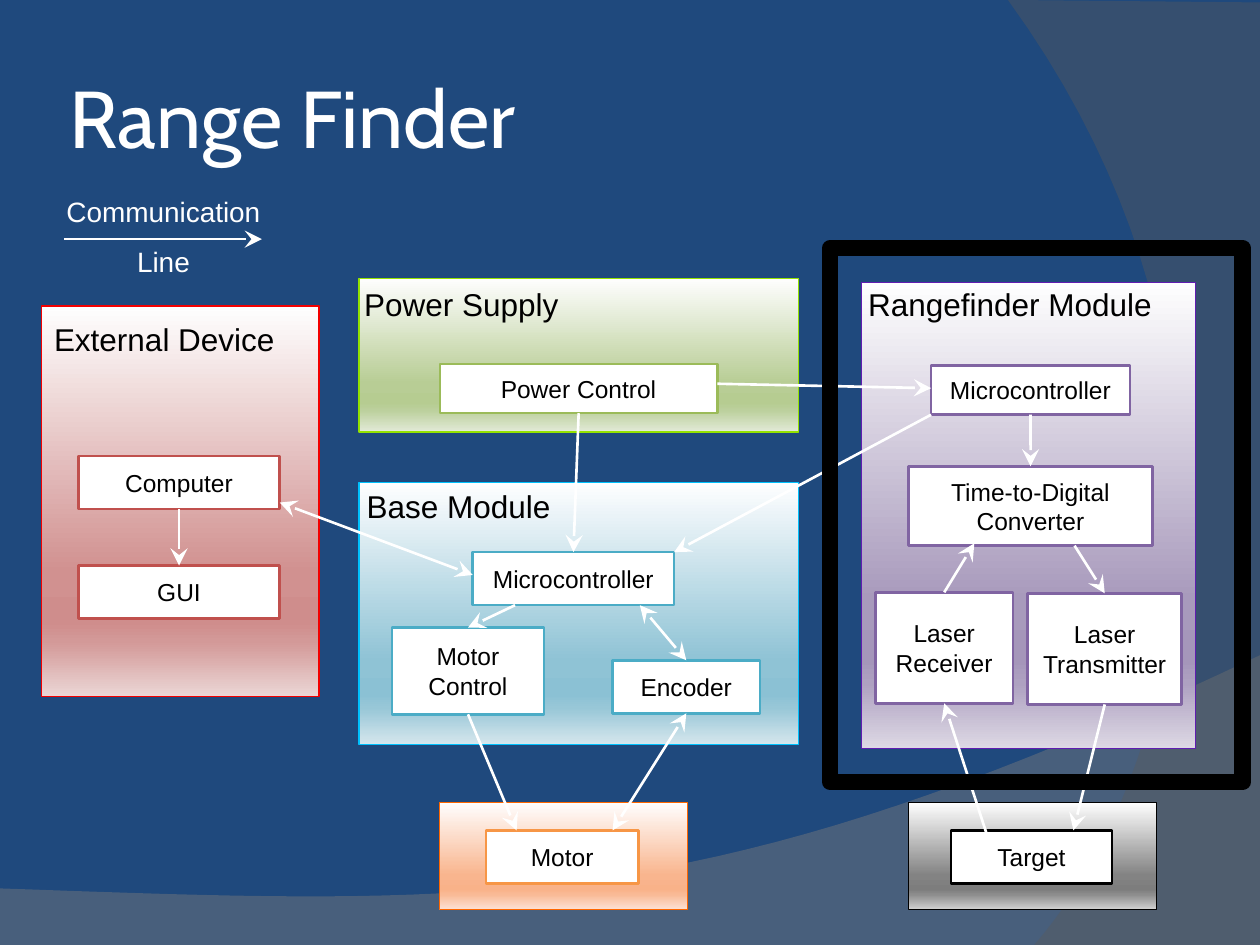
import pptx
import pptx.util
import pptx.dml.color
import pptx.enum.shapes
import pptx.enum.text
import pptx.oxml.ns
from lxml import etree

Cm, Pt = pptx.util.Cm, pptx.util.Pt
qn = pptx.oxml.ns.qn

COLOURS = {
    "background": "1F497D", "white": "FFFFFF", "black": "000000",
    "wave": "7B7B7B", "arc": "5A5A5A",
    "red": "C0504D", "red edge": "F30000",
    "green": "9BBB59", "green edge": "94E200",
    "blue": "4BACC6", "blue edge": "00C1FD",
    "purple": "8064A2", "purple edge": "601DB1",
    "orange": "F79646", "orange edge": "FF6700",
    "black edge": "000000",
}
GRADIENT_STOPS = (0, 68, 81, 86, 100)
GRADIENTS = {
    "red": ("FEFEFE", "D19190", "CF8D8C", "D39998", "EBD6D5"),
    "green": ("FEFEFE", "B8CD95", "B6CC91", "BCD09D", "E2EAD7"),
    "blue": ("FEFEFF", "8FC3D5", "8BC1D4", "98C7D7", "D5E6ED"),
    "purple": ("FEFEFE", "A89ABC", "A596BA", "AEA1C1", "DDD8E4"),
    "orange": ("FFFEFE", "F9B58E", "F9B289", "F9BA96", "FCE1D5"),
    "black": ("FEFEFE", "838383", "7D7D7D", "8D8D8D", "D2D2D2"),
}

# theme, box, title, title inset, blocks placed from the box corner (cm)
MODULES = [
    ("purple", (17.37, 5.69, 6.73, 9.4), "Rangefinder Module", (0.13, 0.05), {
        "range micro": ("Microcontroller", 1.4, 1.68, 4.01, 0.99),
        "converter": ("Time-to-Digital\nConverter", 0.94, 3.71, 4.93, 1.6),
        "receiver": ("Laser\nReceiver", 0.28, 6.25, 2.77, 2.24),
        "transmitter": ("Laser\nTransmitter", 3.35, 6.27, 3.1, 2.24)}),
    ("orange", (8.86, 16.18, 5, 2.16), "", (0, 0), {
        "motor": ("Motor", 0.94, 0.56, 3.07, 1.07)}),
    ("black", (18.31, 16.18, 5, 2.16), "", (0, 0), {
        "target": ("Target", 0.86, 0.56, 3.25, 1.07)}),
    ("red", (0.84, 6.17, 5.59, 7.87), "External Device", (0.25, 0.28), {
        "computer": ("Computer", 0.74, 3.02, 4.06, 1.07),
        "gui": ("GUI", 0.74, 5.23, 4.06, 1.07)}),
    ("green", (7.24, 5.61, 8.86, 3.1), "Power Supply", (0.1, 0.13), {
        "power": ("Power Control", 1.63, 1.73, 5.59, 0.99)}),
    ("blue", (7.24, 9.73, 8.86, 5.28), "Base Module", (0.15, 0.08), {
        "base micro": ("Microcontroller", 2.29, 1.4, 4.06, 1.07),
        "motor control": ("Motor\nControl", 0.66, 2.92, 3.07, 1.75),
        "encoder": ("Encoder", 5.11, 3.58, 2.97, 1.07)}),
]

# block and fraction of its width and height, at each end; two-way or not
LINKS = [
    ("computer", 0.5, 1, "gui", 0.5, 0, False),
    ("power", 0.5, 1, "base micro", 0.5, 0, False),
    ("base micro", 0.21, 1, "motor control", 0.5, 0, False),
    ("motor control", 0.5, 1, "motor", 0.2, 0, False),
    ("power", 1, 0.4, "range micro", 0, 0.46, False),
    ("range micro", 0.5, 1, "converter", 0.5, 0, False),
    ("receiver", 0.5, 0, "converter", 0.27, 0.97, False),
    ("converter", 0.68, 1, "transmitter", 0.5, 0, False),
    ("transmitter", 0.5, 1, "target", 0.76, 0, False),
    ("target", 0.22, 0.05, "receiver", 0.5, 1, False),
    ("computer", 1, 0.88, "base micro", 0, 0.43, True),
    ("range micro", 0, 1, "base micro", 1, 0, False),
    ("base micro", 0.83, 1, "encoder", 0.5, 0, True),
    ("encoder", 0.5, 1, "motor", 0.83, 0, True),
]


def rgb(name):
    return pptx.dml.color.RGBColor.from_string(COLOURS[name])


def set_font(paragraph, size, colour, name="Arial"):
    paragraph.font.size = Pt(size)
    paragraph.font.name = name
    paragraph.font.color.rgb = rgb(colour)


def set_insets(frame, left, top, right, bottom):
    frame.margin_left, frame.margin_top = Cm(left), Cm(top)
    frame.margin_right, frame.margin_bottom = Cm(right), Cm(bottom)


def add_box(slide, box, edge, width):
    rectangle = slide.shapes.add_shape(
        pptx.enum.shapes.MSO_SHAPE.RECTANGLE, *map(Cm, box))
    rectangle.shadow.inherit = False
    rectangle.line.color.rgb = rgb(edge)
    rectangle.line.width = Pt(width)
    return rectangle


def fill_gradient(shape, colours):
    shape.fill.gradient()
    gradient = shape._element.spPr.find(qn("a:gradFill"))
    stops = gradient.find(qn("a:gsLst"))
    for stop in list(stops):
        stops.remove(stop)
    for position, colour in zip(GRADIENT_STOPS, colours):
        stop = etree.SubElement(stops, qn("a:gs"), pos=str(position * 1000))
        etree.SubElement(stop, qn("a:srgbClr"), val=colour)
    gradient.find(qn("a:lin")).set("ang", "5400000")


def add_swoosh(slide, corners, curve, colour, alpha):
    """Fill the area between straight corners and a cubic curve."""
    steps = 40
    points = list(corners)
    for step in range(steps + 1):
        t = step / steps
        weights = ((1 - t) ** 3, 3 * t * (1 - t) ** 2, 3 * t * t * (1 - t), t ** 3)
        points.append(tuple(sum(w * p[axis] for w, p in zip(weights, curve))
                            for axis in (0, 1)))
    builder = slide.shapes.build_freeform(
        Cm(points[0][0]), Cm(points[0][1]))
    builder.add_line_segments([(Cm(x), Cm(y)) for x, y in points[1:]])
    swoosh = builder.convert_to_shape()
    swoosh.shadow.inherit = False
    swoosh.fill.solid()
    swoosh.fill.fore_color.rgb = rgb(colour)
    swoosh.line.fill.background()
    tint = swoosh._element.spPr.find(qn("a:solidFill"))[0]
    etree.SubElement(tint, qn("a:alpha"), val=str(alpha * 1000))


def add_arrow(slide, start, end, two_way=False):
    arrow = slide.shapes.add_connector(
        pptx.enum.shapes.MSO_CONNECTOR.STRAIGHT, *map(Cm, (*start, *end)))
    arrow.line.color.rgb = rgb("white")
    arrow.line.width = Pt(1.5)
    line = arrow.line._get_or_add_ln()
    for tip in ("a:headEnd", "a:tailEnd") if two_way else ("a:tailEnd",):
        etree.SubElement(line, qn(tip), type="stealth", w="lg", len="lg")
    etree.SubElement(arrow._element.spPr, qn("a:effectLst"))


def add_block(slide, box, text, colour):
    block = add_box(slide, box, colour, 1.5)
    block.fill.solid()
    block.fill.fore_color.rgb = rgb("white")
    frame = block.text_frame
    frame.text = text
    frame.vertical_anchor = pptx.enum.text.MSO_ANCHOR.MIDDLE
    set_insets(frame, 0, 0, 0, 0)
    for paragraph in frame.paragraphs:
        paragraph.alignment = pptx.enum.text.PP_ALIGN.CENTER
        set_font(paragraph, 14, "black")


def add_module(slide, box, theme, title, inset, blocks):
    """Draw a module with its blocks; return the block boxes by key."""
    module = add_box(slide, box, theme + " edge", 0.75)
    fill_gradient(module, GRADIENTS[theme])
    if title:
        frame = module.text_frame
        frame.text = title
        frame.vertical_anchor = pptx.enum.text.MSO_ANCHOR.TOP
        set_insets(frame, *inset, 0, 0)
        frame.paragraphs[0].alignment = pptx.enum.text.PP_ALIGN.LEFT
        set_font(frame.paragraphs[0], 18, "black")
    placed = {}
    for key, (text, left, top, width, height) in blocks.items():
        placed[key] = (box[0] + left, box[1] + top, width, height)
        add_block(slide, placed[key], text, theme)
    return placed


def add_title(slide, box):
    title = slide.shapes.title
    title.left, title.top, title.width, title.height = map(Cm, box)
    frame = title.text_frame
    frame.text = "Range Finder"
    frame.vertical_anchor = pptx.enum.text.MSO_ANCHOR.MIDDLE
    set_insets(frame, 0.13, 0.13, 0.13, 0.13)
    frame.paragraphs[0].alignment = pptx.enum.text.PP_ALIGN.LEFT
    set_font(frame.paragraphs[0], 46, "white", "Cabin")


def add_legend(slide, box):
    left, top = box[:2]
    frame = slide.shapes.add_textbox(*map(Cm, box)).text_frame
    frame.word_wrap = True
    frame.text = "Communication Line"
    paragraph = frame.paragraphs[0]
    paragraph.alignment = pptx.enum.text.PP_ALIGN.CENTER
    paragraph.line_spacing = 1.5
    set_font(paragraph, 16, "white")
    add_arrow(slide, (left + 0.33, top + 1.37), (left + 4.31, top + 1.37))


def point_on(box, across, down):
    return box[0] + across * box[2], box[1] + down * box[3]


def main():
    deck = pptx.Presentation()
    deck.slide_width, deck.slide_height = Cm(25.4), Cm(19.05)
    slide = deck.slides.add_slide(deck.slide_layouts[5])

    # Background
    slide.background.fill.solid()
    slide.background.fill.fore_color.rgb = rgb("background")
    add_swoosh(slide, [(0, 19.05), (25.4, 19.05)],
               [(25.4, 13.21), (14.2, 18.52), (9.93, 18.26), (0, 17.91)], "wave", 45)
    add_swoosh(slide, [(25.4, 0.05), (25.4, 19.05)],
               [(20.85, 19.05), (23.75, 15.72), (25.86, 7.62), (20.32, 0)], "arc", 40)

    # Title, modules and legend
    add_title(slide, (1.27, 0.76, 20.75, 3.18))
    placed = {}
    for theme, box, title, inset, blocks in MODULES:
        placed.update(add_module(slide, box, theme, title, inset, blocks))
    add_legend(slide, (0.97, 3.45, 4.65, 2.26))

    # Communication lines
    for source, x1, y1, target, x2, y2, two_way in LINKS:
        add_arrow(slide, point_on(placed[source], x1, y1),
                  point_on(placed[target], x2, y2), two_way)

    # Highlight around the rangefinder
    highlight = add_box(slide, (16.74, 5, 8.31, 10.77), "black", 9.25)
    highlight.fill.background()
    etree.SubElement(highlight.line._get_or_add_ln(), qn("a:round"))

    deck.save("out.pptx")


if __name__ == "__main__":
    main()
